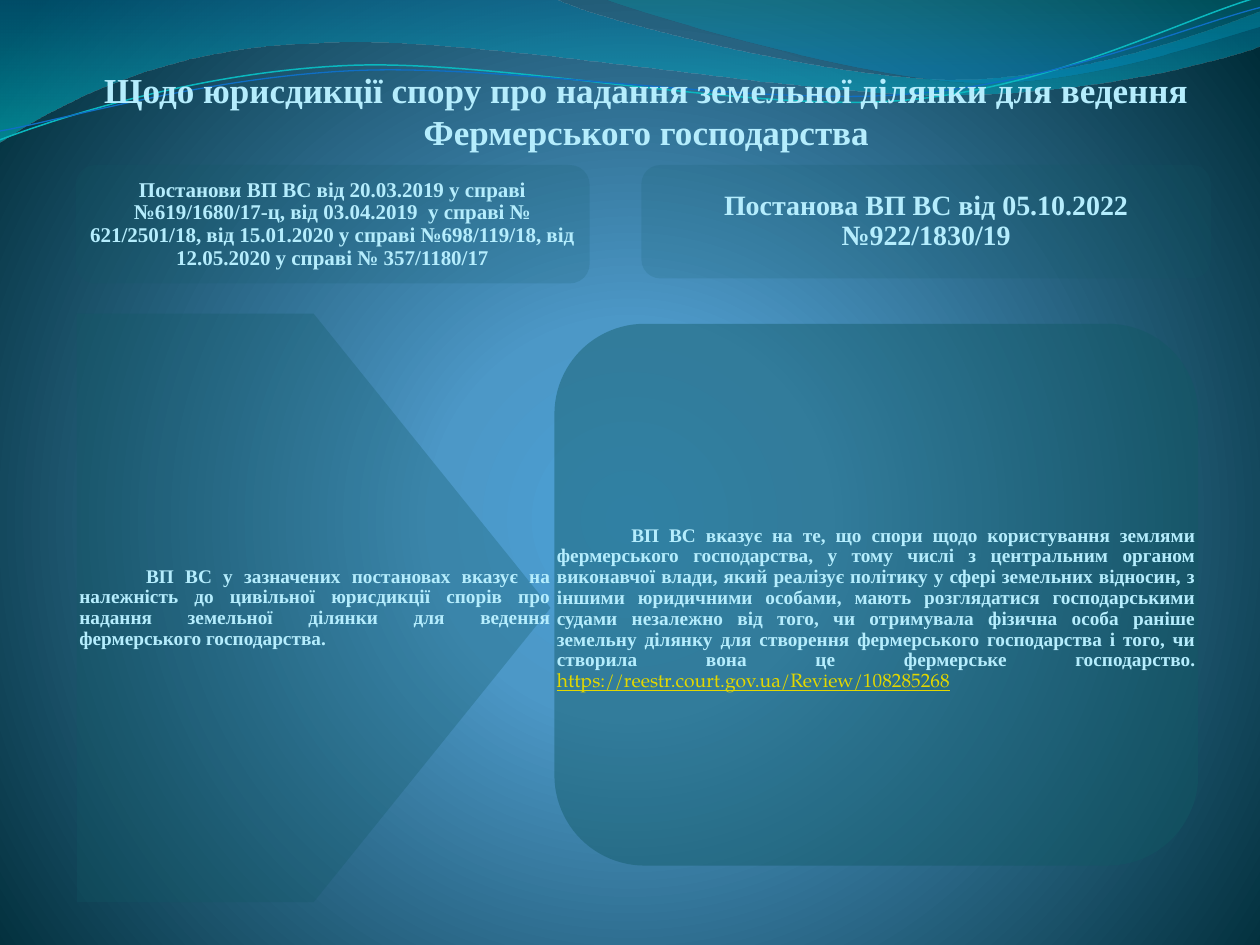
from lxml.etree import SubElement
from pptx import Presentation
from pptx.dml.color import RGBColor
from pptx.enum.shapes import MSO_SHAPE
from pptx.enum.text import MSO_ANCHOR, MSO_AUTO_SIZE, PP_ALIGN
from pptx.oxml import parse_xml
from pptx.oxml.ns import nsdecls, qn
from pptx.util import Inches, Pt

SERIF = "Times New Roman"
PALE, TEAL = "B5EDFD", "115964"


def rgb(code):
    return RGBColor.from_string(code)


def apply(item, form):
    for key, val in form.items():
        setattr(item, key, val)


def blend(root, stops, way):
    marks = "".join(
        f'<a:gs pos="{at * 1000}"><a:srgbClr val="{rgb(code)}">'
        f'<a:alpha val="{seen * 1000}"/></a:srgbClr></a:gs>'
        for at, code, seen in stops)
    old = root.find(".//" + qn("a:noFill"))
    old.getparent().replace(old, parse_xml(
        f'<a:gradFill {nsdecls("a")} rotWithShape="1">'
        f"<a:gsLst>{marks}</a:gsLst>{way}</a:gradFill>"))


def bend(shape, nodes):
    lines = list(shape._element.iter(qn("a:lnTo")))
    for line, node in zip(lines, nodes):
        if len(node) == 6:
            line.tag = qn("a:cubicBezTo")
            for spot, (x, y) in enumerate(zip(node[:4:2], node[1:4:2])):
                knot = line.makeelement(qn("a:pt"), {
                    "x": str(Inches(x) - shape.left),
                    "y": str(Inches(y) - shape.top)})
                line.insert(spot, knot)


def trace(slide, start, nodes, close):
    pen = slide.shapes.build_freeform(*map(Inches, start))
    ends = [tuple(map(Inches, node[-2:])) for node in nodes]
    pen.add_line_segments(ends, close=close)
    shape = pen.convert_to_shape()
    bend(shape, nodes)
    shape.shadow.inherit = False
    shape.fill.background()
    return shape


def wave(slide, start, nodes, stops):
    shape = trace(slide, start, nodes, True)
    blend(shape._element, stops, '<a:lin ang="5400000" scaled="1"/>')
    shape.line.fill.background()


def thread(slide, start, nodes, code, width):
    shape = trace(slide, start, nodes, False)
    shape.line.color.rgb = rgb(code)
    shape.line.width = Pt(width)


def panel(slide, kind, area, seen):
    shape = slide.shapes.add_shape(kind, *area)
    shape.shadow.inherit = False
    shape.fill.solid()
    shape.fill.fore_color.rgb = rgb(TEAL)
    tone = shape._element.spPr.find(".//" + qn("a:srgbClr"))
    SubElement(tone, qn("a:alpha"), val=str(seen * 1000))
    shape.line.fill.background()


def write(para, text, size, code=PALE, name=SERIF, **more):
    run = para.add_run()
    run.text = text
    apply(run.font, {"size": Pt(size), "name": name, "bold": True, **more})
    run.font.color.rgb = rgb(code)


def setup(frame, pads, anchor):
    sides = ("margin_left", "margin_top", "margin_right", "margin_bottom")
    apply(frame, {"word_wrap": True, "auto_size": MSO_AUTO_SIZE.NONE,
                  "vertical_anchor": anchor,
                  **dict(zip(sides, map(Inches, pads)))})
    return frame.paragraphs[0]


def card(slide, kind, area, seen, pads, align, text, size, indent=0):
    area = [Inches(n) for n in area]
    panel(slide, kind, area, seen)
    frame = slide.shapes.add_textbox(*area).text_frame
    para = setup(frame, pads, MSO_ANCHOR.MIDDLE)
    apply(para, {"alignment": align, "line_spacing": 0.9})
    if indent:
        para._p.get_or_add_pPr().set("indent", str(Inches(indent)))
    write(para, text, size)
    return para


def scene(slide):
    slide.background.fill.background()
    blend(slide._element.find(".//" + qn("p:bgPr")),
          [(0, "4AA0D6", 100), (25, "4C98C7", 100), (100, "002C38", 100)],
          '<a:path path="circle"><a:fillToRect l="10000" t="110000" '
          'r="10000" b="100000"/></a:path>')
    wave(slide, (0, 0), [
        (4.4, -0.01), (4.76, 0.17, 6.64, 0.63, 7.58, 0.63),
        (8.53, 0.63, 9.58, 0.26, 10, 0.09), (10.01, 0.36),
        (9.83, 0.44, 8.7, 0.76, 7.46, 0.75),
        (6.22, 0.75, 3.82, 0.28, 2.57, 0.34),
        (1.29, 0.36, 0.46, 0.83, -0.01, 1.13)],
        [(0, "0074A1", 45), (100, "00C6CF", 55)])
    wave(slide, (4.79, -0.01), [
        (5.09, 0.11, 6.82, 0.62, 7.69, 0.65),
        (8.56, 0.69, 9.61, 0.32, 10, 0.21), (10, 0)],
        [(0, "00A1A9", 30), (80, "008BBF", 45)])
    thread(slide, (0, 1.11), [
        (0.48, 0.93, 1.58, 0.57, 2.77, 0.52),
        (3.95, 0.47, 5.93, 0.89, 7.13, 0.8),
        (8.33, 0.71, 9.38, 0.15, 9.98, -0.02)], "0AB8BF", 0.85)
    thread(slide, (0, 1.04), [
        (0.47, 0.96, 1.64, 0.61, 2.83, 0.56),
        (4.03, 0.51, 5.97, 0.84, 7.17, 0.75),
        (8.36, 0.67, 9.41, 0.21, 10, 0.06)], "0F6FC6", 0.75)


def head(slide, text):
    title = slide.shapes.title
    apply(title, {"left": Inches(0.67), "top": Inches(0.36),
                  "width": Inches(8.94), "height": Inches(1.18)})
    para = setup(title.text_frame, (0, 0, 0.02, 0.33), MSO_ANCHOR.BOTTOM)
    para.alignment = PP_ALIGN.CENTER
    write(para, text, 20)
    slide.shapes._spTree.append(title._element)


def main():
    deck = Presentation()
    apply(deck, {"slide_width": Inches(10), "slide_height": Inches(7.5)})
    slide = deck.slides.add_slide(deck.slide_layouts[5])
    scene(slide)
    head(slide, "Щодо юрисдикції спору про надання земельної ділянки "
                "для ведення Фермерського господарства")
    card(slide, MSO_SHAPE.PENTAGON, (0.61, 2.49, 3.76, 4.67), 29,
         (0.02, 0.01, 0, 0.01), PP_ALIGN.JUSTIFY,
         "ВП ВС у зазначених постановах вказує на належність до цивільної "
         "юрисдикції спорів про надання земельної ділянки для ведення "
         "фермерського господарства.", 11, 0.53)
    para = card(
        slide, MSO_SHAPE.FLOWCHART_ALTERNATE_PROCESS,
        (4.4, 2.57, 5.11, 4.3), 44, (0.02, 0.24, 0.02, 0.02),
        PP_ALIGN.JUSTIFY,
        "ВП ВС вказує на те, що спори щодо користування землями фермерського "
        "господарства, у тому числі з центральним органом виконавчої влади, "
        "який реалізує політику у сфері земельних відносин, з іншими "
        "юридичними особами, мають розглядатися господарськими судами "
        "незалежно від того, чи отримувала фізична особа раніше земельну "
        "ділянку для створення фермерського господарства і того, чи створила "
        "вона це фермерське господарство. ", 11, 0.59)
    write(para, "https://reestr.court.gov.ua/Review/108285268", 11, "E2D700",
          "TeX Gyre Pagella", bold=False, underline=True)
    card(slide, MSO_SHAPE.ROUNDED_RECTANGLE, (0.6, 1.31, 4.08, 0.94), 17,
         [0.05] * 4, PP_ALIGN.CENTER,
         "Постанови ВП ВС від 20.03.2019 у справі №619/1680/17-ц, "
         "від 03.04.2019  у справі № 621/2501/18, від 15.01.2020 у справі "
         "№698/119/18, від 12.05.2020 у справі № 357/1180/17", 12)
    card(slide, MSO_SHAPE.ROUNDED_RECTANGLE, (5.09, 1.31, 4.52, 0.9), 16,
         [0.07] * 4, PP_ALIGN.CENTER,
         "Постанова ВП ВС від 05.10.2022 №922/1830/19", 16)
    deck.save("out.pptx")


if __name__ == "__main__":
    main()
